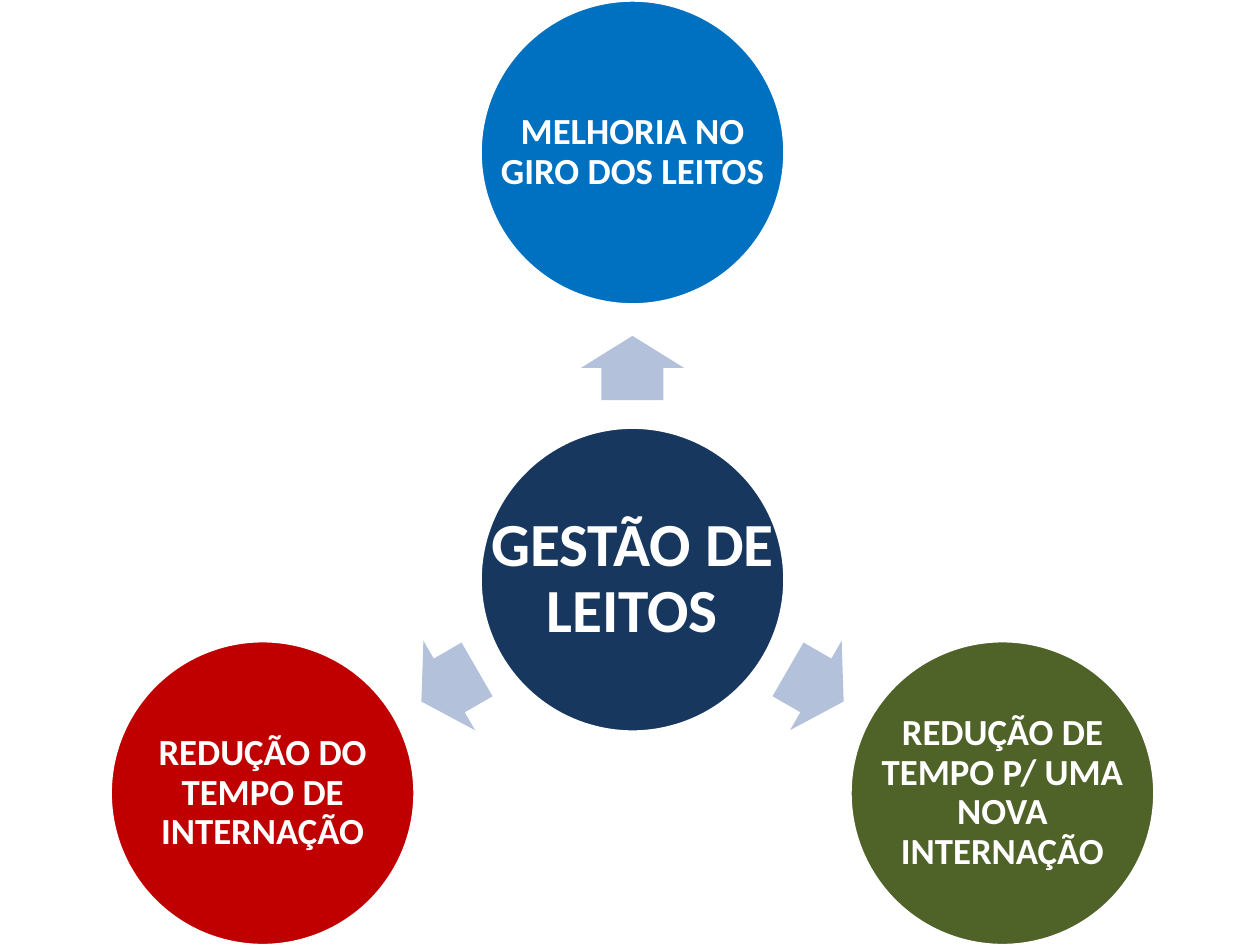
"""Build a hub slide on bed management with three outcomes around it."""
from math import cos, radians, sin

from pptx import Presentation
from pptx.dml.color import RGBColor as RGB
from pptx.enum.shapes import MSO_SHAPE as Shape
from pptx.enum.text import MSO_ANCHOR as Anchor, PP_ALIGN as Align
from pptx.util import Inches, Pt

NAVY = RGB(0x17, 0x37, 0x5E)
BLUE = RGB(0x00, 0x70, 0xC0)
GREEN = RGB(0x4F, 0x62, 0x28)
RED = RGB(0xC0, 0x00, 0x00)
PALE = RGB(0xB3, 0xC1, 0xDB)
WHITE = RGB(0xFF, 0xFF, 0xFF)

HUB_X, HUB_Y = 5.02, 4.6
SIZE = 2.42
ORBIT = 3.39
MID = 1.68

OUTER = [
    (270, "MELHORIA NO GIRO DOS LEITOS", BLUE),
    (30, "REDUÇÃO DE TEMPO P/ UMA NOVA INTERNAÇÃO", GREEN),
    (150, "REDUÇÃO DO TEMPO DE INTERNAÇÃO", RED),
]


def assign(target, values):
    for name, value in values.items():
        setattr(target, name, value)


def polar(angle, reach):
    turn = radians(angle)
    return HUB_X + reach * cos(turn), HUB_Y + reach * sin(turn)


class Board:
    font = {"name": "Calibri", "bold": True}
    para = {"alignment": Align.CENTER, "line_spacing": 0.9}

    def __init__(self, slide):
        self.shapes = slide.shapes

    def box(self, x, y, wide, high):
        return [Inches(v) for v in (x - wide / 2, y - high / 2, wide, high)]

    def solid(self, kind, area, color):
        shape = self.shapes.add_shape(kind, *area)
        shape.shadow.inherit = False
        shape.fill.solid()
        shape.fill.fore_color.rgb = color
        return shape

    def label(self, area, text, size, inset):
        frame = self.shapes.add_textbox(*area).text_frame
        sides = ("left", "top", "right", "bottom")
        assign(frame, {f"margin_{side}": Inches(inset) for side in sides})
        assign(frame, {"word_wrap": True, "vertical_anchor": Anchor.MIDDLE})
        para = frame.paragraphs[0]
        assign(para, self.para)
        run = para.add_run()
        run.text = text
        assign(run.font, {**self.font, "size": Pt(size)})
        run.font.color.rgb = WHITE

    def circle(self, x, y, text, color, size=21, inset=0.03):
        area = self.box(x, y, SIZE, SIZE)
        disc = self.solid(Shape.OVAL, area, color)
        disc.line.color.rgb = WHITE
        disc.line.width = Pt(2)
        self.label(area, text, size, inset)

    def arrow(self, x, y, angle):
        arrow = self.solid(Shape.RIGHT_ARROW, self.box(x, y, 0.51, 0.82), PALE)
        arrow.line.fill.background()
        arrow.adjustments[0] = 0.6
        arrow.adjustments[1] = 0.5
        arrow.rotation = angle


def main():
    deck = Presentation()
    assign(deck, {"slide_width": Inches(10), "slide_height": Inches(7.5)})
    board = Board(deck.slides.add_slide(deck.slide_layouts[6]))
    board.circle(HUB_X, HUB_Y, "GESTÃO DE LEITOS", NAVY, size=35, inset=0.05)
    for angle, text, color in OUTER:
        board.arrow(*polar(angle, MID), angle)
        board.circle(*polar(angle, ORBIT), text, color)
    deck.save("out.pptx")


if __name__ == "__main__":
    main()
